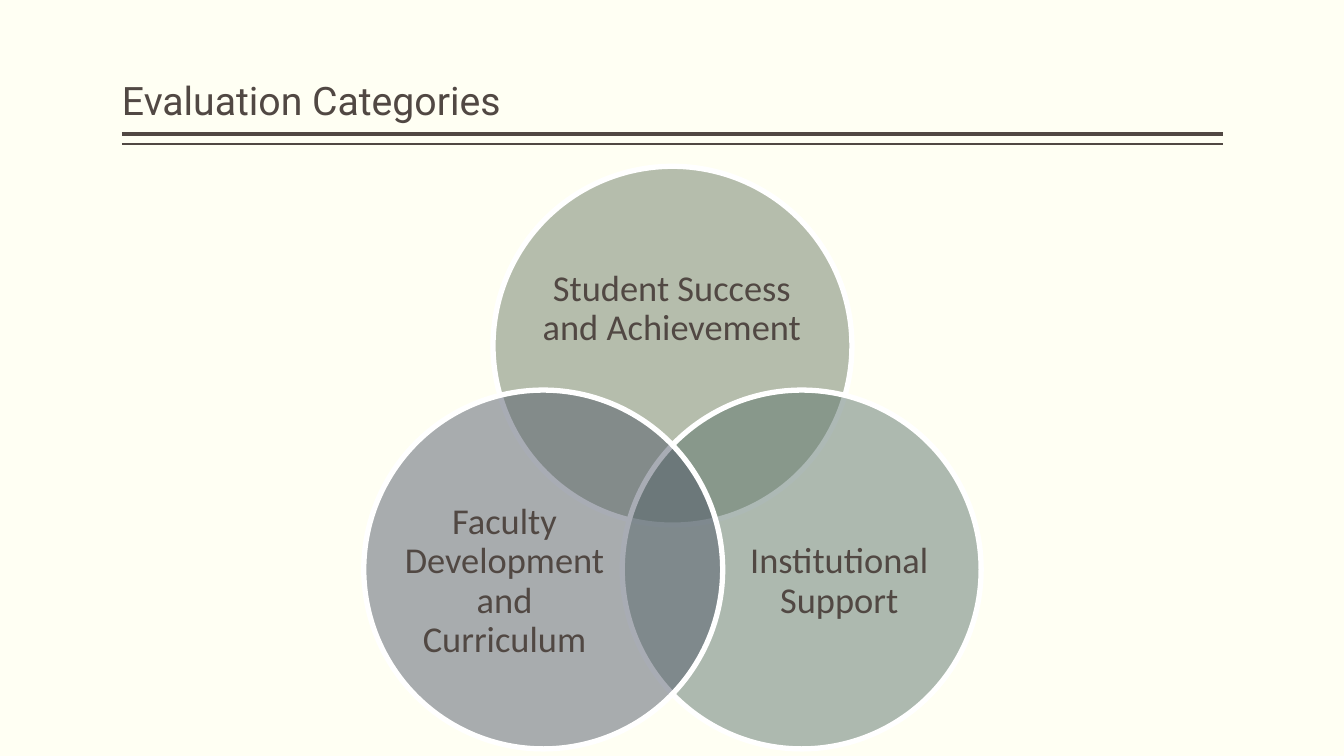
from dataclasses import dataclass
from math import cos, radians, sin

from lxml import etree
from pptx import Presentation
from pptx.dml.color import RGBColor
from pptx.enum.shapes import MSO_CONNECTOR, MSO_SHAPE
from pptx.enum.text import MSO_ANCHOR, PP_ALIGN
from pptx.oxml.ns import qn
from pptx.util import Inches, Pt

ELLIPSE = MSO_SHAPE.OVAL
STRAIGHT = MSO_CONNECTOR.STRAIGHT
MIDDLE, BOTTOM = MSO_ANCHOR.MIDDLE, MSO_ANCHOR.BOTTOM
CENTER, LEFT = PP_ALIGN.CENTER, PP_ALIGN.LEFT


@dataclass(frozen=True)
class Theme:
    background: str = "FFFFF3"
    ink: str = "514843"
    outline: str = "FFFFFF"
    sage: str = "6D7D66"
    teal: str = "5C746C"
    slate: str = "525A6A"
    title_font: str = "Roboto"
    label_font: str = "Calibri"
    title_size: int = 28
    label_size: int = 26
    outline_width: float = 3.78


theme = Theme()


def add_text(slide, box, text, font, size, alignment, anchor, inset=0):
    shape = slide.shapes.add_textbox(*map(Inches, box))
    frame = shape.text_frame
    frame.word_wrap = True
    frame.vertical_anchor = anchor
    frame.margin_left = frame.margin_right = 0
    frame.margin_top = frame.margin_bottom = Inches(inset)
    frame.text = text
    paragraph = frame.paragraphs[0]
    paragraph.alignment = alignment
    paragraph.line_spacing = 0.9
    run = paragraph.runs[0]
    run.font.name = font
    run.font.size = Pt(size)
    run.font.color.rgb = RGBColor.from_string(theme.ink)


presentation = Presentation()
presentation.slide_width = Inches(13.33)
presentation.slide_height = Inches(7.5)
slide = presentation.slides.add_slide(presentation.slide_layouts[6])
slide.background.fill.solid()
slide.background.fill.fore_color.rgb = RGBColor.from_string(theme.background)

# Title with a thick and a thin rule below
left, width = 1.21, 10.92
for y, weight in ((1.33, 3), (1.43, 1)):
    rule = slide.shapes.add_connector(
        STRAIGHT, Inches(left), Inches(y), Inches(left + width), Inches(y))
    rule.line.color.rgb = RGBColor.from_string(theme.ink)
    rule.line.width = Pt(weight)
    etree.SubElement(rule._element.spPr, qn("a:effectLst"))
add_text(slide, (left, 0.08, width, 1.2), "Evaluation Categories",
         theme.title_font, theme.title_size, LEFT, BOTTOM, inset=0.05)

# Venn diagram: three circles spaced evenly around a common centre
center_x, center_y, orbit, diameter = 6.67, 4.91, 1.48, 3.56
categories = (
    ("Student Success and Achievement", theme.sage, (5.36, 2.27, 2.61, 1.6)),
    ("Institutional Support", theme.teal, (7.26, 4.79, 2.13, 1.96)),
    ("Faculty Development and Curriculum", theme.slate, (3.94, 4.79, 2.13, 1.96)),
)
for index, (label, color, label_box) in enumerate(categories):
    angle = radians(120 * index - 90)
    x = center_x + orbit * cos(angle) - diameter / 2
    y = center_y + orbit * sin(angle) - diameter / 2
    circle = slide.shapes.add_shape(
        ELLIPSE, Inches(x), Inches(y), Inches(diameter), Inches(diameter))
    circle.shadow.inherit = False
    circle.fill.solid()
    circle.fill.fore_color.rgb = RGBColor.from_string(color)
    circle.line.color.rgb = RGBColor.from_string(theme.outline)
    circle.line.width = Pt(theme.outline_width)
    # Half-transparent fill lets the overlaps show
    fill_color = circle._element.spPr.find(qn("a:solidFill"))[0]
    etree.SubElement(fill_color, qn("a:alpha"), val="50000")
    add_text(slide, label_box, label, theme.label_font, theme.label_size,
             CENTER, MIDDLE)

presentation.save("out.pptx")
